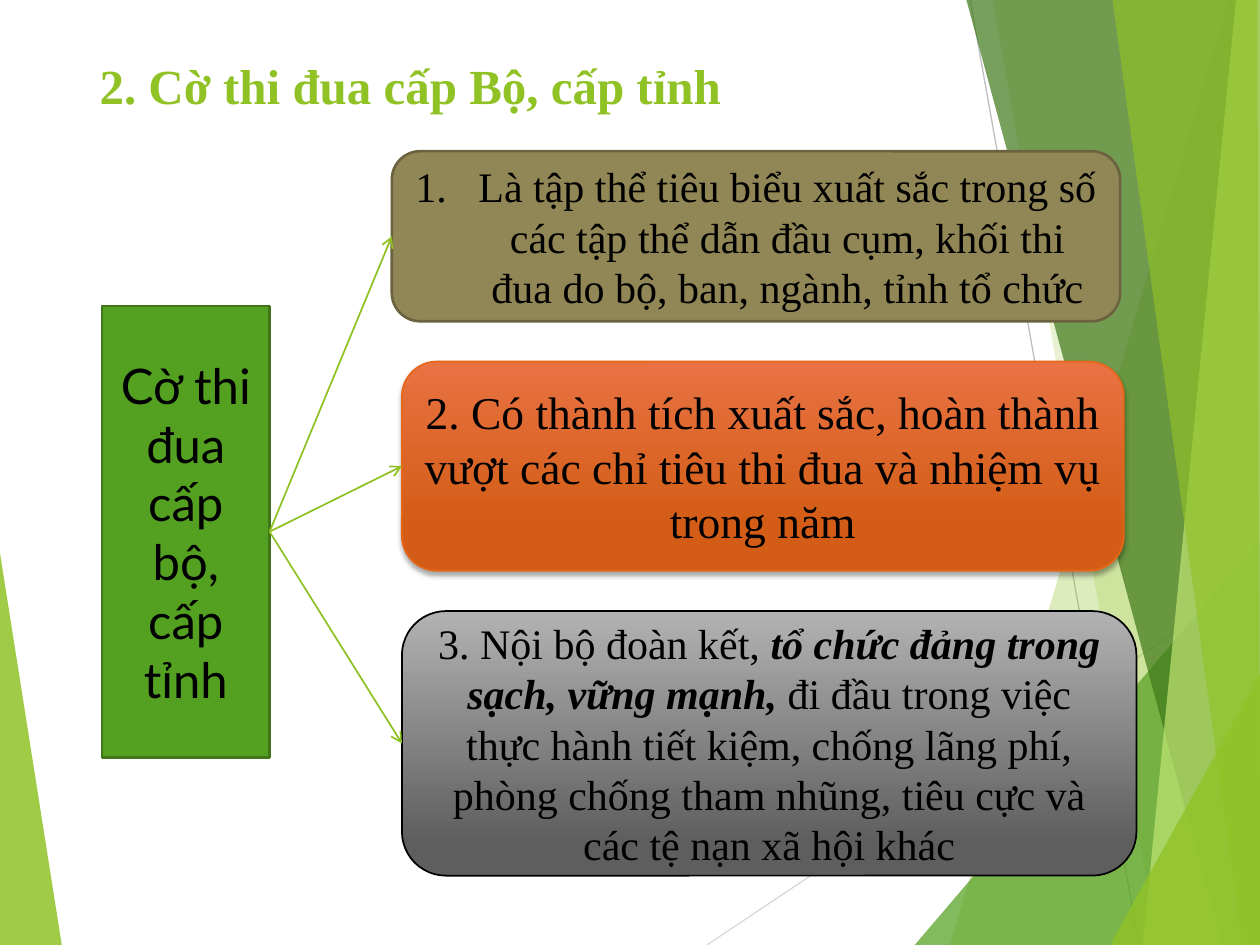
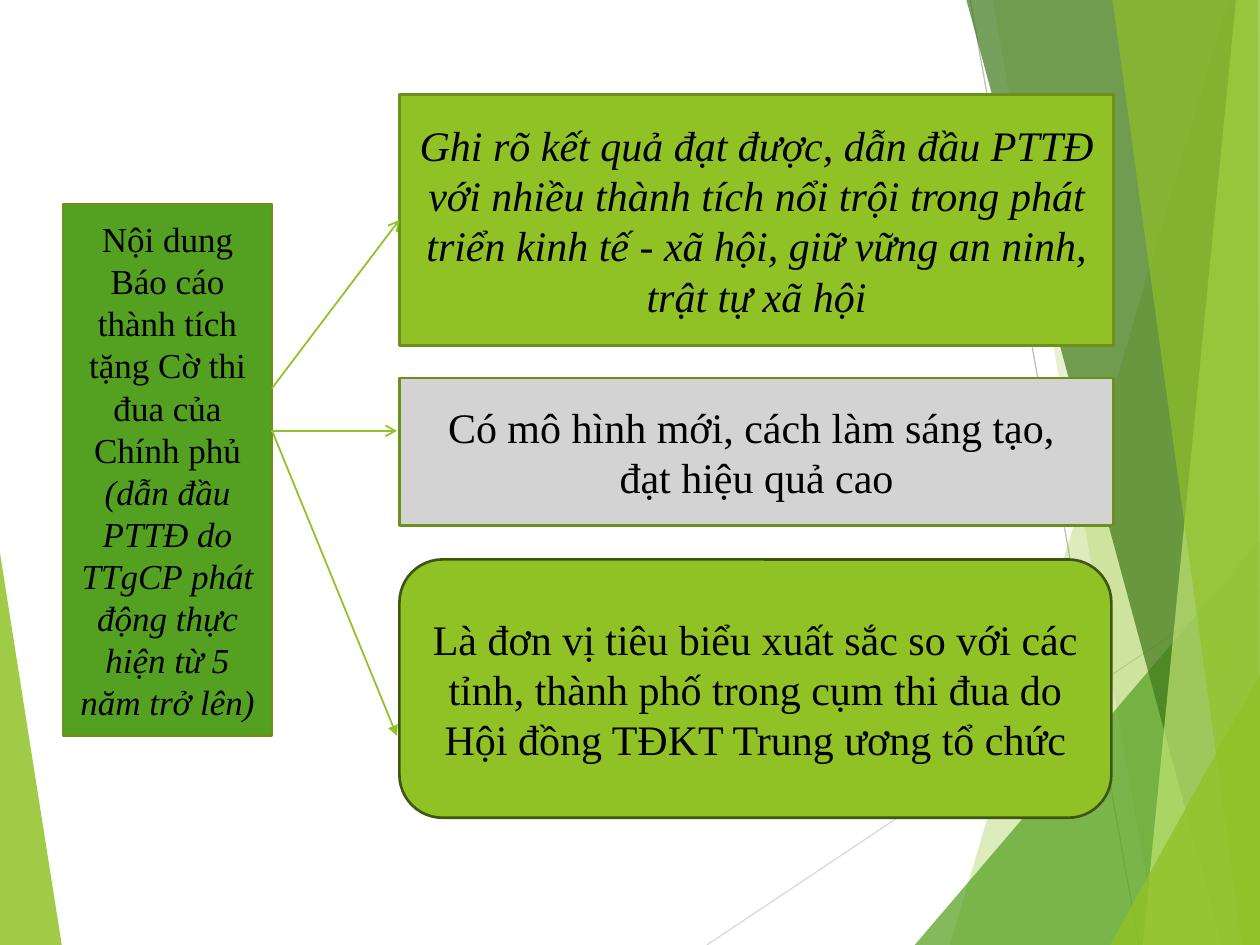
from lxml.etree import SubElement
from pptx import Presentation
from pptx.dml.color import RGBColor
from pptx.enum.shapes import MSO_CONNECTOR as Line, MSO_SHAPE as Shape
from pptx.enum.text import MSO_ANCHOR as Anchor, MSO_AUTO_SIZE as AutoSize, PP_ALIGN as Align
from pptx.oxml.ns import qn
from pptx.util import Inches, Pt

COLORS = {
    "lime": "90C226", "green": "54A021", "forest": "3F7819", "pale": "C0E474",
    "green_edge": "3E7618", "lime_edge": "6B901C", "dark_edge": "3F5511",
    "olive": "918655", "olive_edge": "6B633F",
    "orange_top": "E87242", "orange_base": "D35D16", "orange_edge": "E76618",
    "grey_top": "B2B2B2", "grey_base": "5E5E5E", "silver": "D3D3D3",
    "ray_light": "D9D9D9", "ray_dark": "BFBFBF", "black": "000000",
}
SERIF = "Times New Roman"
RAYS = [((5.61, 7.5), (10, 4.57), "ray_light"), ((7.7, 0), (9.04, 7.5), "ray_dark")]
FACETS = [
    ([(0, 4.39), (0.49, 7.5), (0, 7.5)], "lime", 85),
    ([(9.75, 0), (7.54, 7.5), (10, 7.5), (10, 0)], "lime", 30),
    ([(7.88, 0), (9.19, 7.5), (10, 7.5), (10, 0)], "lime", 20),
    ([(7.26, 7.5), (10, 4.29), (10, 7.5)], "green", 72),
    ([(7.67, 0), (9.7, 7.5), (10, 7.5), (10, 0)], "forest", 70),
    ([(9.81, 0), (9.07, 7.5), (10, 7.5), (10, 0)], "pale", 70),
    ([(8.83, 0), (9.86, 7.5), (10, 7.5), (9.98, 0)], "lime", 65),
    ([(8.81, 7.5), (10, 5.35), (10, 7.5)], "lime", 80),
]


def color(name):
    """Return the named colour of the palette."""
    return RGBColor.from_string(COLORS[name])


def add_line(slide, start, end, line_color, width, head=None):
    """Draw a straight line, with an arrowhead if one is named."""
    ends = [Inches(value) for value in (*start, *end)]
    line = slide.shapes.add_connector(Line.STRAIGHT, *ends)
    line.line.color.rgb = color(line_color)
    line.line.width = Pt(width)
    properties = line._element.spPr
    if head:
        SubElement(properties.find(qn("a:ln")), qn("a:tailEnd"), type=head)
    SubElement(properties, qn("a:effectLst"))
    return line


def add_arrow(slide, start, end, head="arrow"):
    """Draw a lime arrow between two points."""
    return add_line(slide, start, end, "lime", 1, head)


def add_facet(slide, corners, fill_color, opacity):
    """Draw one translucent facet of the background."""
    points = [(Inches(x), Inches(y)) for x, y in corners]
    builder = slide.shapes.build_freeform(*points[0])
    builder.add_line_segments(points[1:], close=True)
    facet = builder.convert_to_shape()
    facet.shadow.inherit = False
    facet.fill.solid()
    facet.fill.fore_color.rgb = color(fill_color)
    facet.line.fill.background()
    tint = facet._element.spPr.find(".//" + qn("a:srgbClr"))
    SubElement(tint, qn("a:alpha"), val=str(opacity * 1000))


def add_background(slide):
    """Draw the rays and facets that all slides share."""
    add_facet(slide, *FACETS[0])
    for start, end, ray_color in RAYS:
        add_line(slide, start, end, ray_color, 0.75)
    for facet in FACETS[1:]:
        add_facet(slide, *facet)


def set_title(slide, text):
    """Place and format the slide title."""
    title = slide.shapes.title
    title.left, title.top = Inches(0.69), Inches(0.4)
    title.width, title.height = Inches(8.62), Inches(0.55)
    frame = title.text_frame
    frame.text = text
    frame.auto_size = AutoSize.NONE
    frame.vertical_anchor = Anchor.MIDDLE
    frame.paragraphs[0].alignment = Align.LEFT
    font = frame.paragraphs[0].runs[0].font
    font.name, font.size, font.bold = SERIF, Pt(28), True
    font.color.rgb = color("lime")


def write_text(frame, paragraphs, size, font_name):
    """Fill a frame with paragraphs, each a list of (text, style) pairs."""
    frame.word_wrap = True
    frame.vertical_anchor = Anchor.MIDDLE
    for index, parts in enumerate(paragraphs):
        paragraph = frame.paragraphs[0] if index == 0 else frame.add_paragraph()
        paragraph.alignment = Align.CENTER
        for text, style in parts:
            run = paragraph.add_run()
            run.text = text
            run.font.name, run.font.size = font_name, Pt(size)
            run.font.bold, run.font.italic = "b" in style, "i" in style
            run.font.color.rgb = color("black")


def add_box(slide, box, fill, edge, paragraphs, size=24, font_name=SERIF,
            kind=Shape.RECTANGLE, edge_width=1.5):
    """Add a filled box with centred text; a string is one plain paragraph."""
    if isinstance(paragraphs, str):
        paragraphs = [[(paragraphs, "")]]
    card = slide.shapes.add_shape(kind, *[Inches(value) for value in box])
    card.shadow.inherit = False
    if isinstance(fill, str):
        card.fill.solid()
        card.fill.fore_color.rgb = color(fill)
    else:
        card.fill.gradient()
        card.fill.gradient_angle = 270
        for stop, (position, name) in zip(card.fill.gradient_stops, fill):
            stop.position = position
            stop.color.rgb = color(name)
    card.line.color.rgb = color(edge)
    card.line.width = Pt(edge_width)
    write_text(card.text_frame, paragraphs, size, font_name)
    return card


def number_paragraph(paragraph):
    """Give a paragraph an automatic number and a hanging indent."""
    properties = paragraph._p.get_or_add_pPr()
    properties.set("marL", str(Inches(0.5)))
    properties.set("indent", str(-Inches(0.5)))
    SubElement(properties, qn("a:buFont"), typeface="+mj-lt")
    SubElement(properties, qn("a:buAutoNum"), type="arabicPeriod")


def add_drop_shadow(card):
    """Cast a soft shadow straight down."""
    effects = card._element.spPr.find(qn("a:effectLst"))
    shadow = SubElement(effects, qn("a:outerShdw"), blurRad=str(Pt(3)),
                        dist=str(Pt(2)), dir="5400000", rotWithShape="0")
    tint = SubElement(shadow, qn("a:srgbClr"), val=COLORS["black"])
    SubElement(tint, qn("a:alpha"), val="35000")


def build_criteria(slide):
    """Build the slide on the criteria for the ministry and province flag."""
    add_background(slide)
    set_title(slide, "2. Cờ thi đua cấp Bộ, cấp tỉnh")
    flag = add_box(slide, (0.81, 2.43, 1.33, 3.58), "green", "green_edge",
                   "Cờ thi đua cấp bộ, cấp tỉnh", 28, "Lato")
    collective = add_box(
        slide, (3.11, 1.2, 5.78, 1.35), "olive", "olive_edge",
        "Là tập thể tiêu biểu xuất sắc trong số các tập thể dẫn đầu cụm, "
        "khối thi đua do bộ, ban, ngành, tỉnh tổ chức",
        kind=Shape.ROUNDED_RECTANGLE)
    number_paragraph(collective.text_frame.paragraphs[0])
    achievement = add_box(
        slide, (3.19, 2.87, 5.73, 1.66),
        [(0, "orange_top"), (0.78, "orange_base")], "orange_edge",
        "2. Có thành tích xuất sắc, hoàn thành vượt các chỉ tiêu thi đua "
        "và nhiệm vụ trong năm",
        26, kind=Shape.ROUNDED_RECTANGLE, edge_width=1)
    add_drop_shadow(achievement)
    unity = add_box(
        slide, (3.19, 4.85, 5.83, 2.1),
        [(0, "grey_top"), (0.88, "grey_base")], "black",
        [[("3. Nội bộ đoàn kết, ", ""),
          ("tổ chức đảng trong sạch, vững mạnh, ", "bi"),
          ("đi đầu trong việc thực hành tiết kiệm, chống lãng phí, phòng chống "
           "tham nhũng, tiêu cực và các tệ nạn xã hội khác", "")]],
        kind=Shape.ROUNDED_RECTANGLE, edge_width=1)
    for criterion in (collective, achievement, unity):
        arrow = add_arrow(slide, (2.14, 4.22), (3.19, 4.22))
        arrow.begin_connect(flag, 3)
        arrow.end_connect(criterion, 1)


def build_report(slide):
    """Build the slide on the content of the achievement report."""
    add_background(slide)
    add_box(slide, (0.5, 1.62, 1.66, 4.22), "green", "lime_edge",
            [[("Nội dung Báo cáo thành tích tặng Cờ thi đua của Chính phủ ", ""),
              ("(dẫn đầu PTTĐ do TTgCP phát động thực hiện từ 5 năm trở lên)", "i")]],
            20)
    results = add_box(
        slide, (3.17, 0.75, 5.67, 1.99), "lime", "lime_edge",
        [[("Ghi rõ kết quả đạt được, dẫn đầu PTTĐ với nhiều thành tích nổi trội "
           "trong phát triển kinh tế - xã hội, giữ vững an ninh, trật tự xã hội", "i")]])
    add_box(slide, (3.17, 3, 5.67, 1.17), "silver", "lime_edge",
            [[("Có mô hình mới, cách làm sáng tạo, ", "")],
             [("đạt hiệu quả cao", "")]])
    add_box(slide, (3.17, 4.44, 5.65, 2.05), "lime", "dark_edge",
            "Là đơn vị tiêu biểu xuất sắc so với các tỉnh, thành phố trong cụm "
            "thi đua do Hội đồng TĐKT Trung ương tổ chức",
            kind=Shape.ROUNDED_RECTANGLE)
    add_arrow(slide, (2.16, 3.08), (3.17, 1.74)).end_connect(results, 1)
    add_arrow(slide, (2.15, 3.42), (3.15, 3.42))
    add_arrow(slide, (2.16, 3.42), (3.15, 5.84), "triangle")


def main():
    """Build and save the two slides."""
    deck = Presentation()
    deck.slide_width, deck.slide_height = Inches(10), Inches(7.5)
    title_only, blank = deck.slide_layouts[5], deck.slide_layouts[6]
    build_criteria(deck.slides.add_slide(title_only))
    build_report(deck.slides.add_slide(blank))
    deck.save("out.pptx")


if __name__ == "__main__":
    main()
